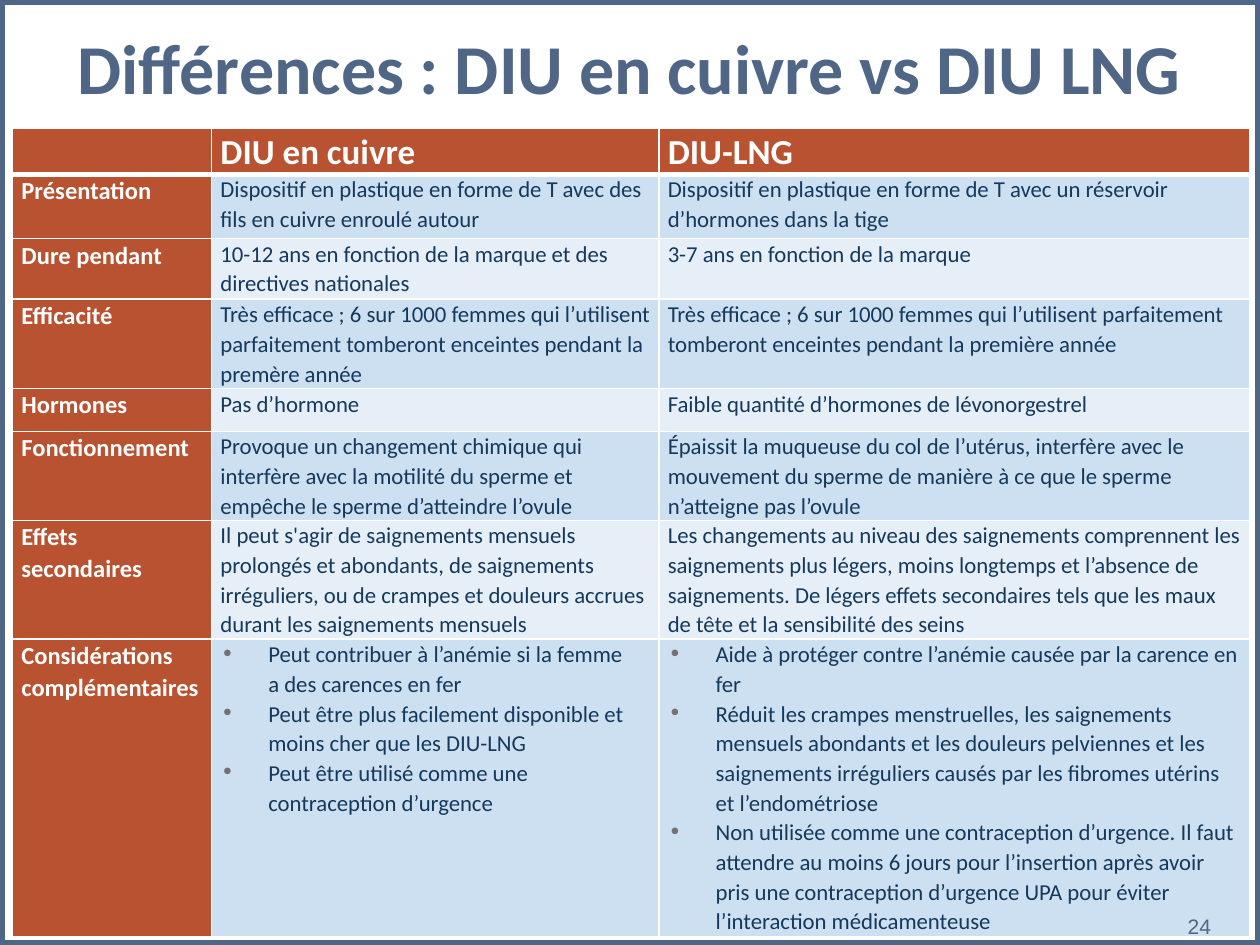
from lxml import etree
from pptx import Presentation
from pptx.dml.color import RGBColor
from pptx.enum.shapes import MSO_SHAPE
from pptx.enum.text import MSO_ANCHOR, PP_ALIGN
from pptx.oxml import parse_xml
from pptx.util import Inches, Pt

RECTANGLE = MSO_SHAPE.RECTANGLE
MIDDLE = MSO_ANCHOR.MIDDLE
CENTER, RIGHT = PP_ALIGN.CENTER, PP_ALIGN.RIGHT
NS = "http://schemas.openxmlformats.org/drawingml/2006/main"
SLATE, RUST, NAVY, WHITE = "506687", "B85231", "15395B", "FFFFFF"
BANDS = ["E6EFF8", "CDE0F2"]


def color(value):
    return RGBColor.from_string(value)


def style(paragraph, size, value, bold=False, name="Calibri"):
    font = paragraph.font
    font.name, font.size, font.bold = name, Pt(size), bold
    font.color.rgb = color(value)


prs = Presentation()
prs.slide_width, prs.slide_height = Inches(10), Inches(7.5)
slide = prs.slides.add_slide(prs.slide_layouts[5])

title = slide.shapes.title
title.left, title.top, title.width, title.height = [Inches(v) for v in (0.05, 0.2, 9.89, 0.65)]
title.text_frame.text = "Différences : DIU en cuivre vs DIU LNG"
title.text_frame.vertical_anchor = MIDDLE
title.text_frame.paragraphs[0].alignment = CENTER
style(title.text_frame.paragraphs[0], 40, SLATE, True)

comparison = [
    ("", ["DIU en cuivre"], ["DIU-LNG"]),
    ("Présentation",
     ["Dispositif en plastique en forme de T avec des fils en cuivre enroulé autour"],
     ["Dispositif en plastique en forme de T avec un réservoir d’hormones dans la tige"]),
    ("Dure pendant",
     ["10-12 ans en fonction de la marque et des directives nationales"],
     ["3-7 ans en fonction de la marque"]),
    ("Efficacité",
     ["Très efficace ; 6 sur 1000 femmes qui l’utilisent parfaitement tomberont enceintes "
      "pendant la premère année"],
     ["Très efficace ; 6 sur 1000 femmes qui l’utilisent parfaitement tomberont enceintes "
      "pendant la première année"]),
    ("Hormones", ["Pas d’hormone"], ["Faible quantité d’hormones de lévonorgestrel"]),
    ("Fonctionnement",
     ["Provoque un changement chimique qui interfère avec la motilité du sperme et empêche "
      "le sperme d’atteindre l’ovule"],
     ["Épaissit la muqueuse du col de l’utérus, interfère avec le mouvement du sperme de "
      "manière à ce que le sperme n’atteigne pas l’ovule"]),
    ("Effets secondaires",
     ["Il peut s'agir de saignements mensuels prolongés et abondants, de saignements "
      "irréguliers, ou de crampes et douleurs accrues durant les saignements mensuels"],
     ["Les changements au niveau des saignements comprennent les saignements plus légers, "
      "moins longtemps et l’absence de saignements. De légers effets secondaires tels que "
      "les maux de tête et la sensibilité des seins"]),
    ("Considérations complémentaires",
     ["Peut contribuer à l’anémie si la femme \va des carences en fer",
      "Peut être plus facilement disponible et moins cher que les DIU-LNG",
      "Peut être utilisé comme une contraception d’urgence"],
     ["Aide à protéger contre l’anémie causée par la carence en fer",
      "Réduit les crampes menstruelles, les saignements mensuels abondants et les douleurs "
      "pelviennes et les saignements irréguliers causés par les fibromes utérins et "
      "l’endométriose",
      "Non utilisée comme une contraception d’urgence. Il faut attendre au moins 6 jours "
      "pour l’insertion après avoir pris une contraception d’urgence UPA pour éviter "
      "l’interaction médicamenteuse"]),
]
column_widths = [1.58, 3.55, 4.69]
row_heights = [0.36, 0.51, 0.48, 0.71, 0.34, 0.7, 0.94, 2.36]

table = slide.shapes.add_table(
    len(row_heights), len(column_widths), Inches(0.1), Inches(1.02),
    Inches(sum(column_widths)), Inches(sum(row_heights))).table
for column, width in zip(table.columns, column_widths):
    column.width = Inches(width)
for row, height in zip(table.rows, row_heights):
    row.height = Inches(height)

for r, (label, copper, hormonal) in enumerate(comparison):
    for c, entries in enumerate([[label], copper, hormonal]):
        cell = table.cell(r, c)
        heading = r == 0 or c == 0
        cell.margin_left = cell.margin_right = Inches(0.07)
        cell.margin_top = cell.margin_bottom = 0
        tc_pr = cell._tc.get_or_add_tcPr()
        for side in "LRTB":
            thick = (r, side) in [(0, "B"), (1, "T")]
            tc_pr.append(parse_xml(
                f'<a:ln{side} xmlns:a="{NS}" w="{Pt(3 if thick else 1)}">'
                f'<a:solidFill><a:srgbClr val="{WHITE}"/></a:solidFill></a:ln{side}>'))
        cell.fill.solid()
        cell.fill.fore_color.rgb = color(RUST if heading else BANDS[r % 2])

        cell.text_frame.text = "\n".join(entries)
        for paragraph in cell.text_frame.paragraphs:
            paragraph.line_spacing = 1.07
            if len(entries) > 1:
                p_pr = paragraph._p.get_or_add_pPr()
                p_pr.set("marL", str(Inches(0.38)))
                p_pr.set("indent", str(-Inches(0.38)))
                bullet_color = etree.SubElement(p_pr, f"{{{NS}}}buClr")
                etree.SubElement(bullet_color, f"{{{NS}}}srgbClr", val="767171")
                etree.SubElement(p_pr, f"{{{NS}}}buChar", char="∙")
            size = 20 if r == 0 else 14 if c == 0 else 13
            style(paragraph, size, WHITE if heading else NAVY, heading)

page_number = slide.shapes.add_textbox(
    Inches(7.38), Inches(7.15), Inches(2.33), Inches(0.4)).text_frame
page_number.word_wrap = True
page_number.vertical_anchor = MIDDLE
page_number.text = "24"
page_number.paragraphs[0].alignment = RIGHT
style(page_number.paragraphs[0], 12, SLATE, name="Arial")

frame = slide.shapes.add_shape(RECTANGLE, 0, 0, prs.slide_width, prs.slide_height)
frame.shadow.inherit = False
frame.fill.background()
frame.line.color.rgb = color(SLATE)
frame.line.width = Pt(5.25)

prs.save("out.pptx")
